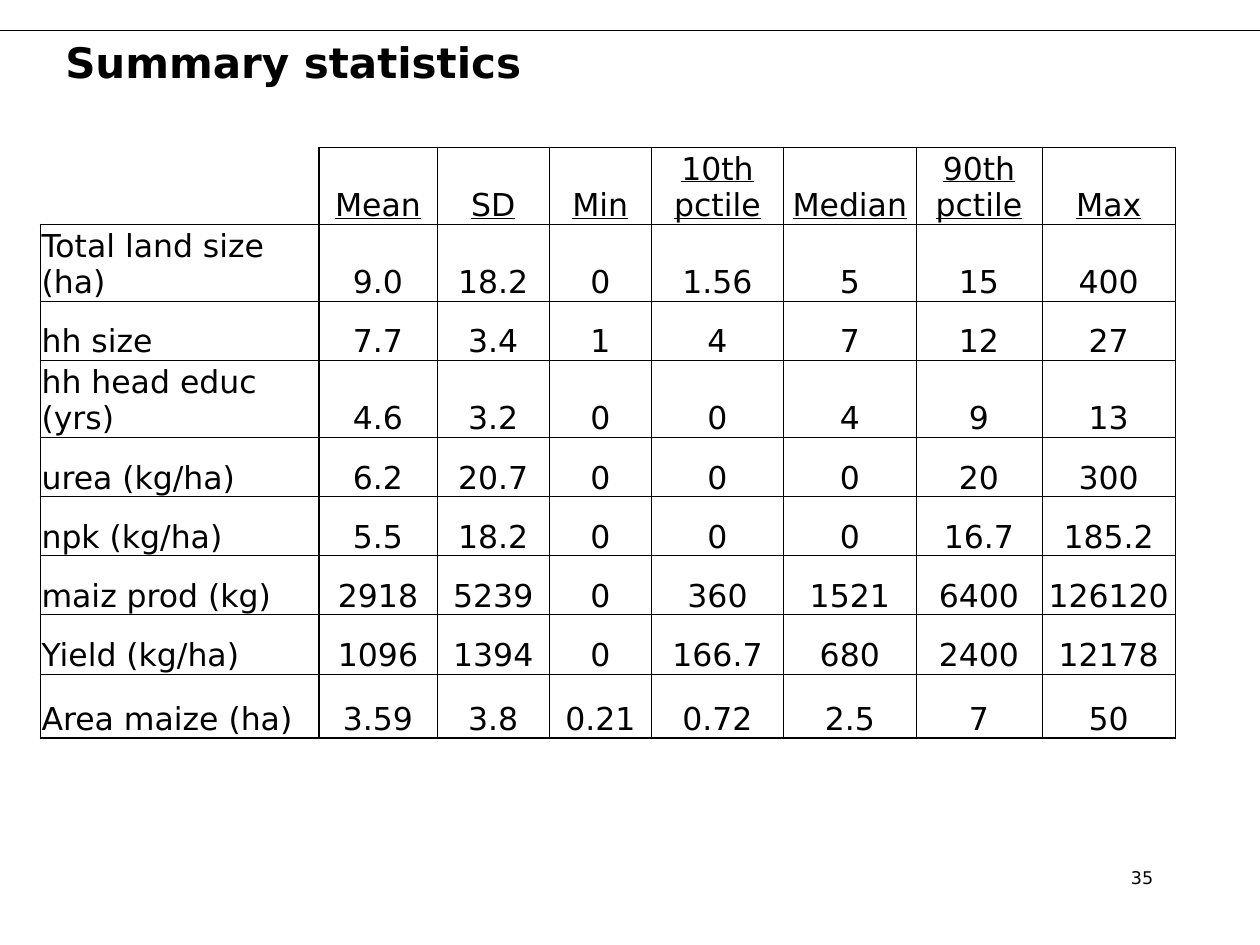
"""Build the summary statistics slide."""
from dataclasses import dataclass

from lxml.etree import SubElement
from pptx import Presentation
from pptx.dml.color import RGBColor
from pptx.enum.text import MSO_ANCHOR, PP_ALIGN
from pptx.oxml.ns import qn
from pptx.util import Inches, Pt


@dataclass(frozen=True)
class Theme:
    font: str = "DejaVu Sans"
    ink: str = "000000"
    title_size: int = 24
    table_size: int = 18
    number_size: int = 10
    rule_width: float = 0.75
    thin_border: float = 0.5
    thick_border: float = 1


THEME = Theme()
COLUMN_WIDTHS = [2.21, 0.94, 0.89, 0.81, 1.05, 1.05, 1, 1.06]
ROW_HEIGHTS = [0.51] + [0.47] * 7 + [0.51]
STATISTICS = [
    ["", "Mean", "SD", "Min", "10th pctile", "Median", "90th pctile", "Max"],
    ["Total land size (ha)", "9.0", "18.2", "0", "1.56", "5", "15", "400"],
    ["hh size", "7.7", "3.4", "1", "4", "7", "12", "27"],
    ["hh head educ (yrs)", "4.6", "3.2", "0", "0", "4", "9", "13"],
    ["urea (kg/ha)", "6.2", "20.7", "0", "0", "0", "20", "300"],
    ["npk (kg/ha)", "5.5", "18.2", "0", "0", "0", "16.7", "185.2"],
    ["maiz prod (kg)", "2918", "5239", "0", "360", "1521", "6400", "126120"],
    ["Yield (kg/ha)", "1096", "1394", "0", "166.7", "680", "2400", "12178"],
    ["Area maize (ha)", "3.59", "3.8", "0.21", "0.72", "2.5", "7", "50"],
]


def add_run(paragraph, text, size, bold=False, underline=False):
    run = paragraph.add_run()
    run.text = text
    run.font.name = THEME.font
    run.font.size = Pt(size)
    run.font.bold = bold
    run.font.underline = underline
    run.font.color.rgb = RGBColor.from_string(THEME.ink)


def add_text(slide, box, text, size, align, anchor, bold=False):
    shape = slide.shapes.add_textbox(*map(Inches, box))
    frame = shape.text_frame
    frame.word_wrap = True
    frame.vertical_anchor = anchor
    paragraph = frame.paragraphs[0]
    paragraph.alignment = align
    add_run(paragraph, text, size, bold)


def add_rule(slide, left, right, top):
    line = slide.shapes.add_connector(
        1, Inches(left), Inches(top), Inches(right), Inches(top))
    line.line.color.rgb = RGBColor.from_string(THEME.ink)
    line.line.width = Pt(THEME.rule_width)
    SubElement(line._element.spPr, qn("a:effectLst"))


def add_border(cell, side, width):
    properties = cell._tc.get_or_add_tcPr()
    border = SubElement(properties, qn(f"a:ln{side}"), w=str(Pt(width)))
    if width:
        fill = SubElement(border, qn("a:solidFill"))
        SubElement(fill, qn("a:srgbClr"), val=THEME.ink)
    else:
        SubElement(border, qn("a:noFill"))


def border_width(edge, last_edge, beside_corner):
    if edge == 0 and beside_corner:
        return 0
    return THEME.thick_border if edge in (0, 1, last_edge) else THEME.thin_border


def style_cell(cell, row, column):
    cell.vertical_anchor = MSO_ANCHOR.BOTTOM
    cell.margin_left = cell.margin_right = cell.margin_top = Inches(0.01)
    cell.margin_bottom = 0
    last_row, last_column = len(ROW_HEIGHTS), len(COLUMN_WIDTHS)
    add_border(cell, "L", border_width(column, last_column, row == 0))
    add_border(cell, "R", border_width(column + 1, last_column, False))
    add_border(cell, "T", border_width(row, last_row, column == 0))
    add_border(cell, "B", border_width(row + 1, last_row, False))
    cell.fill.background()


def add_statistics_table(slide, left, top):
    table = slide.shapes.add_table(
        len(ROW_HEIGHTS), len(COLUMN_WIDTHS), Inches(left), Inches(top),
        Inches(sum(COLUMN_WIDTHS)), Inches(sum(ROW_HEIGHTS))).table
    table.first_row = table.horz_banding = False
    for column, width in zip(table.columns, COLUMN_WIDTHS):
        column.width = Inches(width)
    for row, height in zip(table.rows, ROW_HEIGHTS):
        row.height = Inches(height)
    for row, values in enumerate(STATISTICS):
        for column, value in enumerate(values):
            cell = table.cell(row, column)
            style_cell(cell, row, column)
            if value:
                paragraph = cell.text_frame.paragraphs[0]
                paragraph.alignment = PP_ALIGN.CENTER if column else PP_ALIGN.LEFT
                add_run(paragraph, value, THEME.table_size, underline=row == 0)


def main():
    presentation = Presentation()
    presentation.slide_width = Inches(10)
    presentation.slide_height = Inches(7.5)
    slide = presentation.slides.add_slide(presentation.slide_layouts[6])
    add_rule(slide, 0, 10, 0.24)
    add_text(slide, (0.42, 0.24, 8.5, 0.5), "Summary statistics",
             THEME.title_size, PP_ALIGN.LEFT, MSO_ANCHOR.MIDDLE, bold=True)
    add_statistics_table(slide, 0.32, 1.17)
    add_text(slide, (7.17, 6.83, 2.08, 0.5), "35",
             THEME.number_size, PP_ALIGN.RIGHT, MSO_ANCHOR.TOP)
    presentation.save("out.pptx")


if __name__ == "__main__":
    main()
